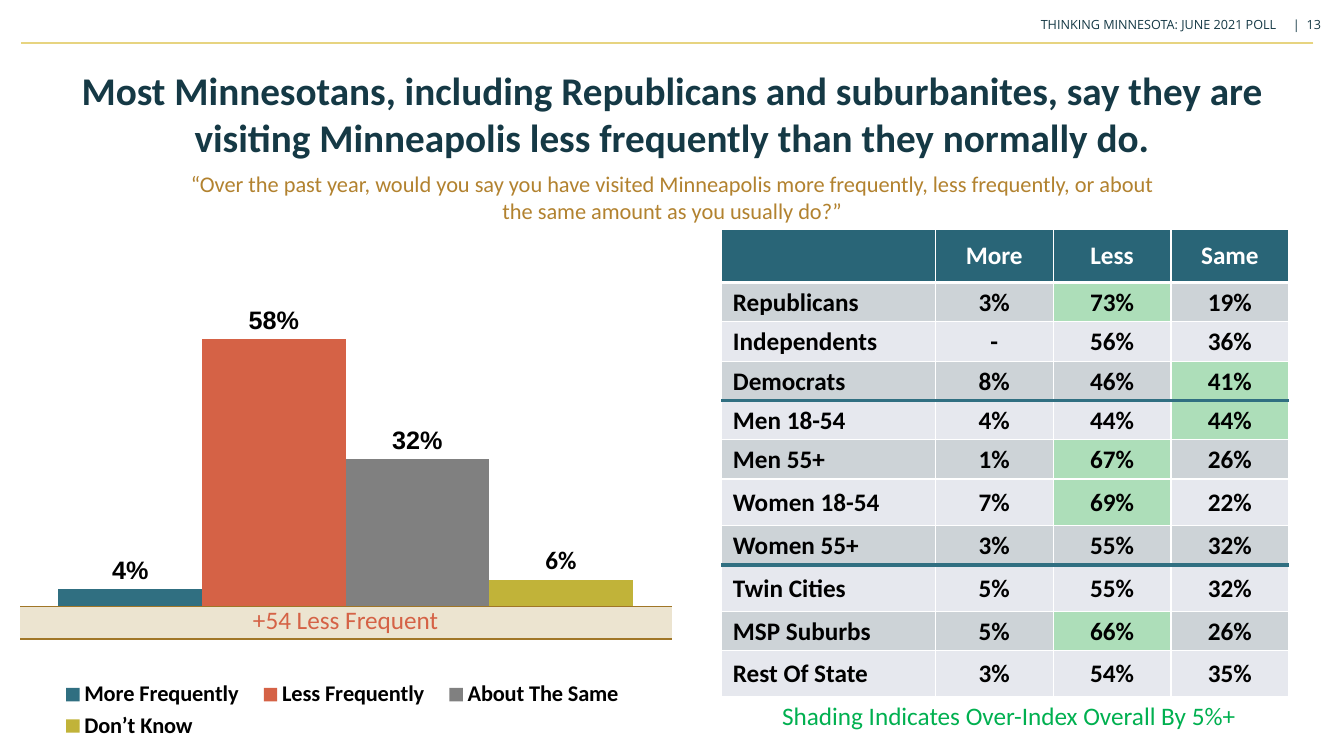
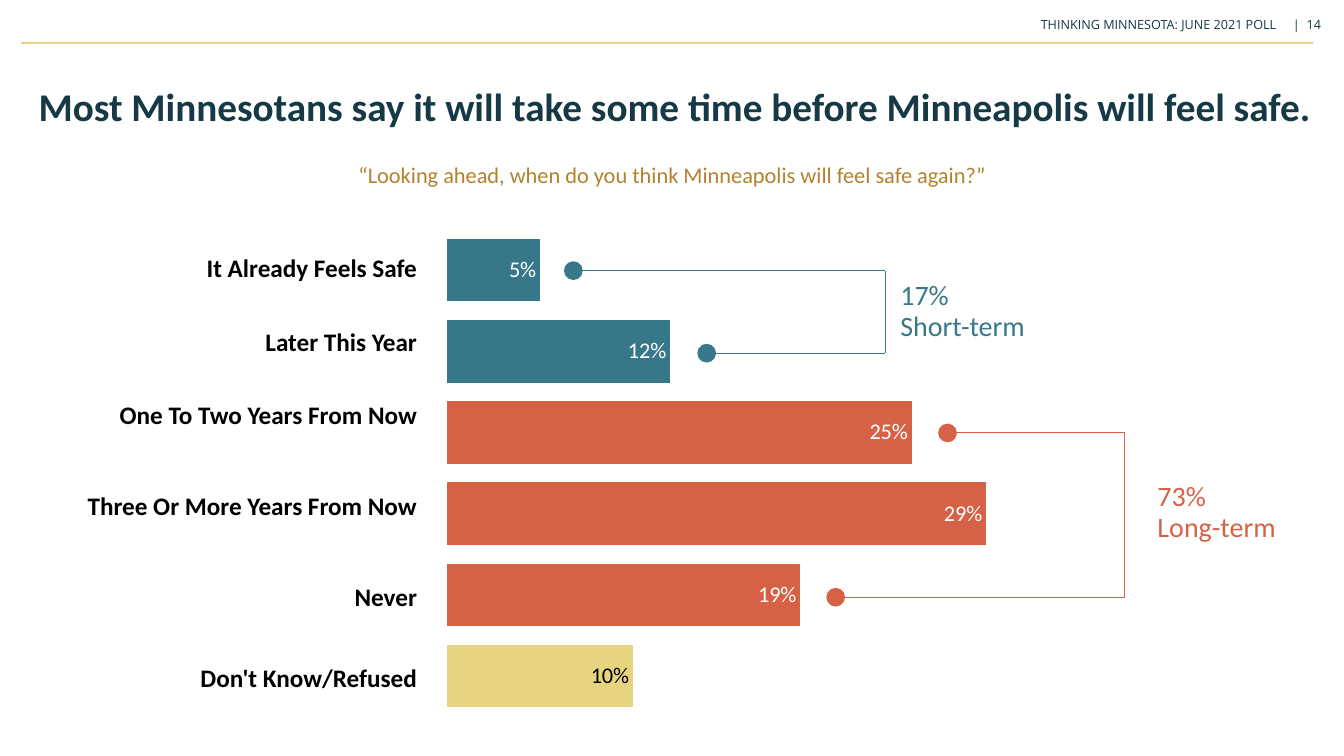
from dataclasses import dataclass

from lxml.etree import SubElement
from pptx import Presentation
from pptx.chart.data import CategoryChartData
from pptx.dml.color import RGBColor
from pptx.enum.chart import (XL_CHART_TYPE as ChartType, XL_LABEL_POSITION as LabelPos,
                             XL_LEGEND_POSITION as LegendPos, XL_TICK_LABEL_POSITION as TickLabels,
                             XL_TICK_MARK as TickMark)
from pptx.enum.shapes import MSO_CONNECTOR as Connector, MSO_SHAPE as Shape
from pptx.enum.text import MSO_ANCHOR as Anchor, MSO_AUTO_SIZE as AutoSize, PP_ALIGN as Align
from pptx.oxml import parse_xml
from pptx.oxml.ns import nsdecls, qn
from pptx.util import Cm, Pt


@dataclass(frozen=True)
class Theme:
    navy: str = "153945"
    gold: str = "E7D480"
    bronze: str = "B2822F"
    teal: str = "306F81"
    bar_teal: str = "36788A"
    bracket_teal: str = "38788A"
    coral: str = "D56246"
    gray: str = "808080"
    olive: str = "C1B339"
    green: str = "00B050"
    shading: str = "ADDEB9"
    header_fill: str = "296577"
    row_fills: tuple = ("CDD3D7", "E6E8EE")
    band_fill: str = "ECE4D0"
    band_edge: str = "A07627"
    white: str = "FFFFFF"
    black: str = "000000"
    font: str = "Calibri"
    chart_font: str = "Arial"
    header_font: str = "Open Sans"
    title_size: int = 28
    callout_size: int = 20
    body_size: int = 18
    question_size: int = 16
    chart_size: int = 10
    header_size: int = 9


THEME = Theme()


def style_font(font, size=THEME.body_size, color=THEME.black, bold=False, name=THEME.font):
    font.size, font.bold, font.name = Pt(size), bold, name
    font.color.rgb = RGBColor.from_string(color)


def write(frame, text, align=Align.LEFT, spacing=None, **font_format):
    paragraph = frame.paragraphs[0]
    paragraph.alignment = align
    if spacing:
        paragraph.line_spacing = spacing
    run = paragraph.add_run()
    run.text = text
    style_font(run.font, **font_format)
    return paragraph


def paint(fill, color):
    fill.solid()
    fill.fore_color.rgb = RGBColor.from_string(color)


def box(left, top, width, height):
    return Cm(left), Cm(top), Cm(width), Cm(height)


def set_edges(cell, **edges):
    """Set cell borders L, R, T and B, each given as (colour, points) or left out for none."""
    properties = cell._tc.get_or_add_tcPr()
    for index, side in enumerate("LRTB"):
        color, points = edges.get(side, (None, 0))
        fill = f'<a:solidFill><a:srgbClr val="{color}"/></a:solidFill>' if color else "<a:noFill/>"
        properties.insert(index, parse_xml(
            f'<a:ln{side} {nsdecls("a")} w="{Pt(points)}">{fill}</a:ln{side}>'))


def set_layout(parent, index, x, y, w, h, inner=False):
    """Place a chart part by fractions of the chart's size."""
    for old in parent.findall(qn("c:layout")):
        parent.remove(old)
    target = '<c:layoutTarget val="inner"/>' if inner else ""
    modes = "".join(f'<c:{axis}Mode val="edge"/>' for axis in "xy")
    sizes = "".join(f'<c:{key} val="{value}"/>' for key, value in zip("xywh", (x, y, w, h)))
    parent.insert(index, parse_xml(
        f'<c:layout {nsdecls("c")}><c:manualLayout>{target}{modes}{sizes}'
        "</c:manualLayout></c:layout>"))


class Deck:
    def __init__(self, theme):
        self.theme = theme
        self.prs = Presentation()
        self.prs.slide_width, self.prs.slide_height = Cm(33.87), Cm(19.05)
        self.slide = None

    def start(self, number, title, title_box, question, question_top):
        theme = self.theme
        self.slide = self.prs.slides.add_slide(self.prs.slide_layouts[5])
        self.line((33.1, 1.09), (0.53, 1.09), theme.gold, 1.25)
        header = self.text(f"THINKING MINNESOTA: JUNE 2021 POLL\t|\t{number}",
                           (25.98, 0.3, 7.8, 0.79), size=theme.header_size,
                           color=theme.navy, name=theme.header_font)
        tabs = SubElement(header._p.get_or_add_pPr(), qn("a:tabLst"))
        for position in (6.35, 6.7):
            SubElement(tabs, qn("a:tab"), pos=str(Cm(position)), algn="l")

        holder = self.slide.shapes.title
        holder.left, holder.top, holder.width, holder.height = box(*title_box)
        frame = holder.text_frame
        frame.auto_size, frame.word_wrap = AutoSize.NONE, True
        frame.vertical_anchor = Anchor.MIDDLE
        write(frame, title, Align.CENTER, size=theme.title_size, color=theme.navy, bold=True)
        self.text(question, (4.22, question_top, 25.45, 1.09), align=Align.CENTER,
                  size=theme.question_size, color=theme.bronze)

    def text(self, text, place, **text_format):
        frame = self.slide.shapes.add_textbox(*box(*place)).text_frame
        frame.word_wrap = True
        return write(frame, text, **text_format)

    def line(self, start, end, color, points=0.75):
        line = self.slide.shapes.add_connector(
            Connector.STRAIGHT, *(Cm(value) for value in (*start, *end)))
        line.line.color.rgb = RGBColor.from_string(color)
        line.line.width = Pt(points)
        SubElement(line.element.spPr, qn("a:effectLst"))

    def dot(self, x, y, color, diameter=0.4):
        dot = self.slide.shapes.add_shape(
            Shape.OVAL, *box(x - diameter / 2, y - diameter / 2, diameter, diameter))
        dot.shadow.inherit = False
        paint(dot.fill, color)
        dot.line.color.rgb = RGBColor.from_string(color)
        dot.line.width = Pt(2)

    def bracket(self, ends, spine, color):
        """Join dotted ends, given as (x, y), to one vertical spine."""
        for x, y in ends:
            self.dot(x, y, color)
            self.line((x + 0.2, y), (spine, y), color)
        self.line((spine, ends[0][1]), (spine, ends[-1][1]), color)

    def callout(self, share, label, left, top, color):
        for row, words in enumerate((share, label)):
            self.text(words, (left, top + 0.78 * row, 4, 1.12),
                      size=self.theme.callout_size, color=color)

    def table(self, left, top, widths, heights):
        frame = self.slide.shapes.add_table(
            len(heights), len(widths), *box(left, top, sum(widths), sum(heights)))
        table = frame.table
        table.first_row = table.horz_banding = False
        for column, width in zip(table.columns, widths):
            column.width = Cm(width)
        for row, height in zip(table.rows, heights):
            row.height = Cm(height)
        return table

    def cell(self, cell, text, fill=None, edges=None, margins=(0.03, 0.03, 0.03, 0),
             **text_format):
        """Fill one cell; margins run left, top, right, bottom."""
        cell.vertical_anchor = Anchor.MIDDLE
        (cell.margin_left, cell.margin_top,
         cell.margin_right, cell.margin_bottom) = map(Cm, margins)
        if fill:
            paint(cell.fill, fill)
        else:
            cell.fill.background()
        set_edges(cell, **(edges or {}))
        write(cell.text_frame, text, **text_format)

    def chart(self, kind, place, categories, series, gap, maximum, plot_area):
        data = CategoryChartData(number_format="0%")
        data.categories = categories
        for name, values in series:
            data.add_series(name, values)
        chart = self.slide.shapes.add_chart(kind, *box(*place), data).chart
        style_font(chart.font, self.theme.chart_size, name=self.theme.chart_font)
        chart.has_title = chart.has_legend = False
        plot = chart.plots[0]
        plot.gap_width, plot.overlap, plot.vary_by_categories = gap, 0, False
        scale = chart.value_axis
        scale.minimum_scale, scale.maximum_scale = 0, maximum
        scale.has_major_gridlines = scale.visible = False
        set_layout(chart._chartSpace.xpath("c:chart/c:plotArea")[0], 0, *plot_area, inner=True)
        return chart

    def series(self, series, fill, position, **label_format):
        paint(series.format.fill, fill)
        series.invert_if_negative = False
        labels = series.data_labels
        labels.show_value, labels.position = True, position
        labels.number_format, labels.number_format_is_linked = "0%", False
        style_font(labels.font, **label_format)


def visits_chart(deck, answers):
    """Draw the overall answers, given as (name, percent, colour, label font)."""
    chart = deck.chart(ChartType.COLUMN_CLUSTERED, (0.48, 5.94, 16.46, 12.93), ["Overall"],
                       [(name, [percent / 100]) for name, percent, *_ in answers],
                       gap=55, maximum=0.7, plot_area=(0, 0.092, 1, 0.633))
    axis = chart.category_axis
    axis.tick_label_position, axis.major_tick_mark = TickLabels.NONE, TickMark.NONE
    axis.format.line.fill.background()
    for series, (_, _, color, font) in zip(chart.plots[0].series, answers):
        deck.series(series, color, LabelPos.OUTSIDE_END, bold=True, name=font)
    chart.has_legend = True
    chart.legend.position, chart.legend.include_in_layout = LegendPos.BOTTOM, False
    style_font(chart.legend.font, deck.theme.question_size, bold=True)
    set_layout(chart._chartSpace.xpath("c:chart/c:legend")[0], 1, 0.045, 0.86, 0.9, 0.13)


def visits_table(deck, groups, overall):
    theme = deck.theme
    tall_rows = (6, 8, 10)
    divided_rows = (3, 7)
    heights = [1.35] + [1.17 if row in tall_rows else 0.99 for row in range(1, len(groups) + 1)]
    table = deck.table(18.19, 5.77, [5.38] + [2.97] * 3, heights)
    thin, thick, divider = (theme.white, 1), (theme.white, 3), (theme.teal, 3)
    below = [thick] + [divider if row in divided_rows else thin
                       for row in range(1, len(groups) + 1)]
    for column, heading in enumerate(("", "More", "Less", "Same")):
        deck.cell(table.cell(0, column), heading, theme.header_fill,
                  dict(L=thin, R=thin, T=thin, B=thick), (0.13,) * 4,
                  align=Align.CENTER, color=theme.white, bold=True)
    for row, (group, *shares) in enumerate(groups, start=1):
        edges = dict(L=thin, R=thin, T=below[row - 1], B=below[row])
        row_fill = theme.row_fills[(row - 1) % 2]
        deck.cell(table.cell(row, 0), group, row_fill, edges, (0.28, 0.03, 0.03, 0), bold=True)
        for column, (share, average) in enumerate(zip(shares, overall), start=1):
            over_index = share is not None and share >= average + 5
            deck.cell(table.cell(row, column), "-" if share is None else f"{share}%",
                      theme.shading if over_index else row_fill, edges,
                      align=Align.CENTER, bold=True)


def visits_slide(deck):
    theme = deck.theme
    deck.start(13, "Most Minnesotans, including Republicans and suburbanites, say they are "
               "visiting Minneapolis less frequently than they normally do.",
               (1.37, 1.55, 31.12, 2.62),
               "“Over the past year, would you say you have visited Minneapolis more frequently, "
               "less frequently, or about the same amount as you usually do?”", 4.17)
    answers = [("More Frequently", 4, theme.teal, theme.chart_font),
               ("Less Frequently", 58, theme.coral, theme.chart_font),
               ("About The Same", 32, theme.gray, theme.chart_font),
               ("Don’t Know", 6, theme.olive, theme.font)]
    groups = [("Republicans", 3, 73, 19), ("Independents", None, 56, 36),
              ("Democrats", 8, 46, 41), ("Men 18-54", 4, 44, 44), ("Men 55+", 1, 67, 26),
              ("Women 18-54", 7, 69, 22), ("Women 55+", 3, 55, 32), ("Twin Cities", 5, 55, 32),
              ("MSP Suburbs", 5, 66, 26), ("Rest Of State", 3, 54, 35)]
    visits_table(deck, groups, [percent for _, percent, *_ in answers[:3]])
    deck.text("Shading Indicates Over-Index Overall By 5%+", (18.82, 17.53, 13.21, 1.02),
              align=Align.CENTER, color=theme.green)
    visits_chart(deck, answers)
    side, rule = (theme.white, 1), (theme.band_edge, 1)
    band = deck.table(0.48, 15.29, [16.46], [0.81])
    deck.cell(band.cell(0, 0), "+54 Less Frequent", theme.band_fill,
              dict(L=side, R=side, T=rule, B=rule), (0.25, 0.13, 0.25, 0.13),
              align=Align.CENTER, spacing=0.7, color=theme.coral)


def safety_slide(deck):
    theme = deck.theme
    deck.start(14, "Most Minnesotans say it will take some time before Minneapolis will feel safe.",
               (0.08, 1.35, 33.83, 2.62),
               "“Looking ahead, when do you think Minneapolis will feel safe again?”", 3.94)
    answers = [("It Already Feels Safe", 0.05, theme.bar_teal, 1.85),
               ("Later This Year", 0.12, theme.bar_teal, 1.85),
               ("One To Two Years From Now", 0.25, theme.coral, 1.85),
               ("Three Or More Years From Now", 0.29, theme.coral, 2.74),
               ("Never", 0.19, theme.coral, 1.85),
               ("Don't Know/Refused", 0.1, theme.gold, 2.21)]
    names, shares, colors, heights = zip(*answers)
    chart = deck.chart(ChartType.BAR_CLUSTERED, (9.98, 5.79, 18.36, 12.47),
                       [str(rank) for rank in range(1, len(names) + 1)], [("Series 1", shares)],
                       gap=30, maximum=0.35, plot_area=(0.07, 0, 0.893, 0.984))
    chart.category_axis.reverse_order = True
    chart.category_axis.visible = False
    bars = chart.plots[0].series[0]
    deck.series(bars, theme.bar_teal, LabelPos.INSIDE_END,
                size=theme.question_size, color=theme.white)
    for index, color in enumerate(colors):
        paint(bars.points[index].format.fill, color)
    unsure = bars.points[len(names) - 1].data_label
    style_font(unsure.font, theme.question_size)
    unsure.position = LabelPos.INSIDE_END

    labels = deck.table(0.38, 5.84, [10.16], heights)
    for row, name in enumerate(names):
        deck.cell(labels.cell(row, 0), name, align=Align.RIGHT, bold=True)

    deck.bracket([(14.45, 6.82), (17.81, 8.9)], 22.31, theme.bracket_teal)
    deck.callout("17%", "Short-term", 22.44, 6.86, theme.bracket_teal)
    deck.bracket([(23.88, 10.91), (21.06, 15.05)], 28.35, theme.coral)
    deck.callout("73%", "Long-term", 28.92, 11.94, theme.coral)


def main():
    deck = Deck(THEME)
    visits_slide(deck)
    safety_slide(deck)
    deck.prs.save("out.pptx")


if __name__ == "__main__":
    main()
